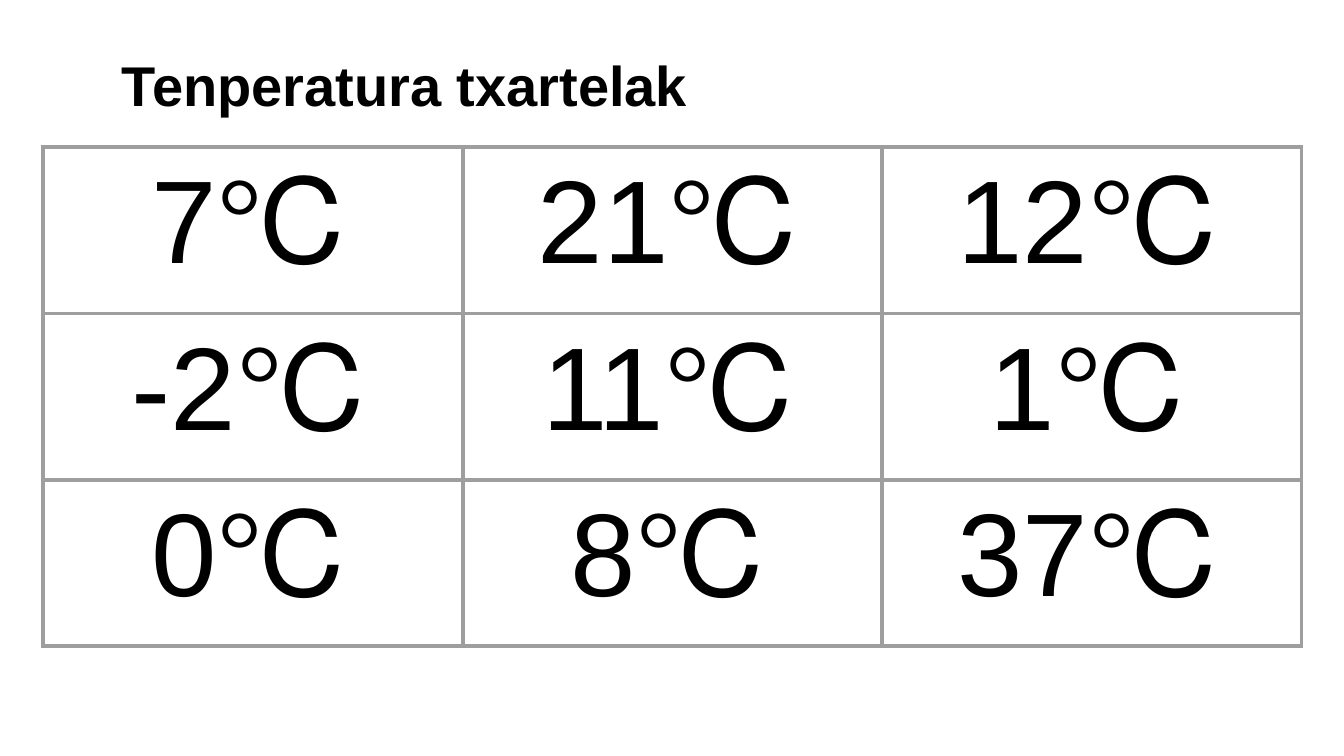
import pptx
import pptx.util
import pptx.dml.color
import pptx.enum.text
import pptx.oxml

Inches = pptx.util.Inches
Pt = pptx.util.Pt
RGBColor = pptx.dml.color.RGBColor
ALIGN = pptx.enum.text.PP_ALIGN
BLACK = RGBColor(0x00, 0x00, 0x00)
GREY = RGBColor(0x9E, 0x9E, 0x9E)
NS = "http://schemas.openxmlformats.org/drawingml/2006/main"


def add_run(para, text, size, bold=False):
    run = para.add_run()
    run.text = text
    run.font.name = "Arial"
    run.font.size = Pt(size)
    run.font.bold = bold
    run.font.color.rgb = BLACK


def add_border(cell):
    props = cell._tc.get_or_add_tcPr()
    for index, side in enumerate("LRTB"):
        line = pptx.oxml.parse_xml(
            f'<a:ln{side} xmlns:a="{NS}" w="{Pt(3)}"><a:solidFill>'
            f'<a:srgbClr val="{GREY}"/></a:solidFill></a:ln{side}>'
        )
        props.insert(index, line)


deck = pptx.Presentation()
deck.slide_width = Inches(13.33)
deck.slide_height = Inches(7.5)
slide = deck.slides.add_slide(deck.slide_layouts[5])

title = slide.shapes.title
title.left, title.top = Inches(1.11), Inches(0.4)
title.width, title.height = Inches(11.68), Inches(5.49)
frame = title.text_frame
frame.word_wrap = True
frame.auto_size = pptx.enum.text.MSO_AUTO_SIZE.NONE
frame.vertical_anchor = pptx.enum.text.MSO_ANCHOR.TOP
para = frame.paragraphs[0]
para.alignment = ALIGN.LEFT
para.line_spacing = 1.07
add_run(para, "Tenperatura txartelak", 40, True)

cards = [
    ["7℃", "21℃", "12℃"],
    ["-2℃", "11℃", "1℃"],
    ["0℃", "8℃", "37℃"],
]
wide, high = Inches(4.16), Inches(1.65)
table = slide.shapes.add_table(
    3, 3, Inches(0.43), Inches(1.46), wide * 3, high * 3
).table
table.first_row = False
table.horz_banding = False
for col in table.columns:
    col.width = wide
for row, temps in zip(table.rows, cards):
    row.height = high
    for cell, temp in zip(row.cells, temps):
        cell.margin_left = cell.margin_right = Inches(0.1)
        cell.margin_top = cell.margin_bottom = Inches(0.1)
        cell.fill.background()
        add_border(cell)
        para = cell.text_frame.paragraphs[0]
        para.alignment = ALIGN.CENTER
        add_run(para, temp, 84)

deck.save("out.pptx")
